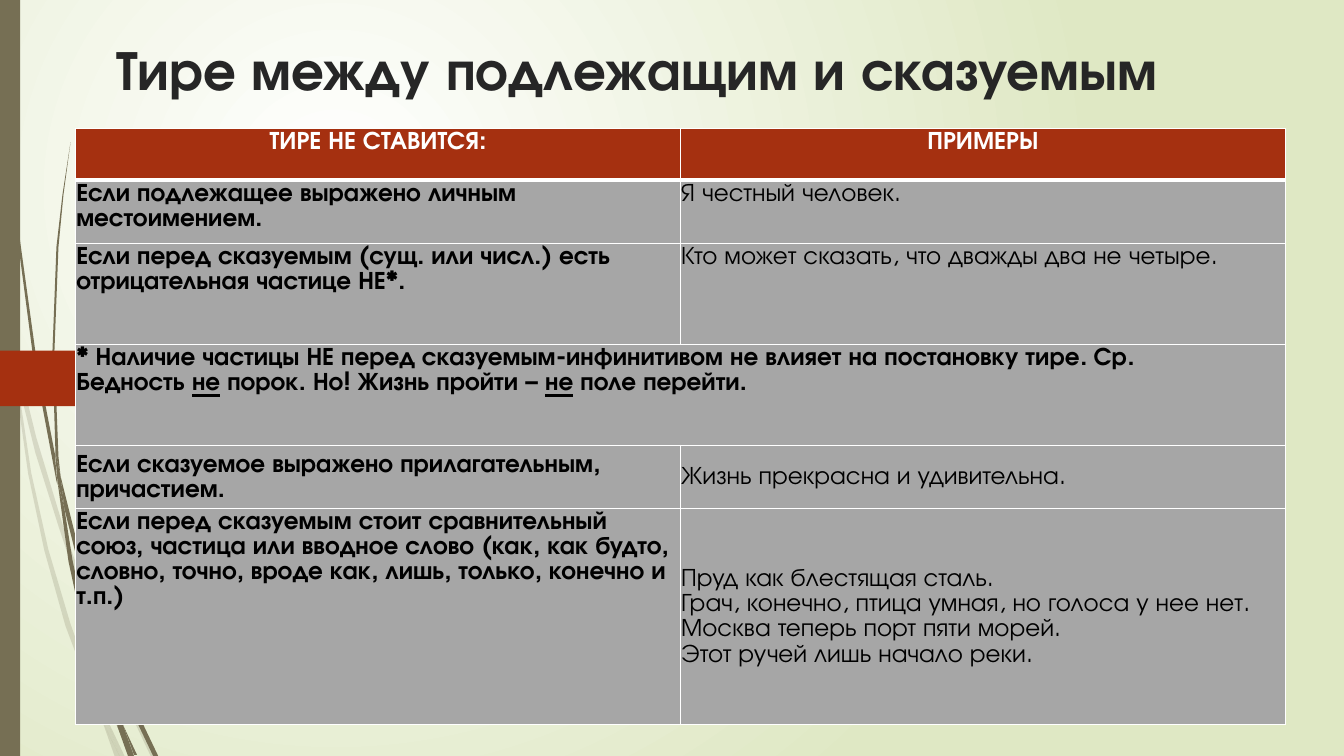
import lxml.etree
import pptx
import pptx.dml.color
import pptx.enum.dml
import pptx.enum.shapes
import pptx.enum.text
import pptx.oxml
import pptx.oxml.ns
import pptx.util

Pt = pptx.util.Pt
qn = pptx.oxml.ns.qn
ALIGN = pptx.enum.text.PP_ALIGN
ANCHOR = pptx.enum.text.MSO_ANCHOR
SHAPES = pptx.enum.shapes.MSO_SHAPE

FONT = "TeX Gyre Adventor"
OLIVE, RUST, GREY, WHITE, BLACK = "766F54", "A53010", "A6A6A6", "FFFFFF", "000000"
GRASS_UNIT = Pt(0.72)
HARD_SPACE = chr(160)

PALE_GRASS = [
    [(11, 350), (9, 322), (0, 282), (0, 299), (10, 344)],
    [(58, 522), (84, 600), (85, 587), (62, 520), (36, 434), (14, 345), (17, 376), (35, 449)],
    [(92, 607), (88, 596), (88, 610), (123, 694), (150, 751), (155, 751), (127, 692)],
    [(119, 751), (124, 751), (105, 711)],
    [(93, 683), (70, 619), (48, 545), (31, 469), (17, 376), (11, 350), (28, 470), (44, 546),
     (65, 621), (92, 693), (101, 714), (99, 707)],
    [(84, 599), (87, 646), (93, 683), (96, 692), (105, 712), (103, 707), (91, 646), (88, 610),
     (88, 608)],
    [(88, 584), (94, 522), (110, 462), (132, 404), (160, 349), (193, 296), (229, 245), (268, 198),
     (290, 175), (312, 153), (289, 175), (268, 197), (228, 244), (191, 295), (158, 348),
     (129, 403), (107, 461), (91, 521), (85, 584), (85, 586), (88, 596)],
    [(101, 714), (114, 751), (119, 751)],
    [(88, 608), (88, 610), (88, 596), (85, 586), (84, 599)],
    [(96, 692), (93, 683), (99, 707), (101, 714), (119, 751), (105, 711)],
]
DARK_GRASS = [
    [(7, 110), (17, 233), (33, 355), (56, 477), (57, 481), (55, 457), (55, 453), (36, 355),
     (19, 232), (8, 109), (5, 48), (4, 0), (3, 0), (4, 48)],
    [(88, 592), (106, 645), (106, 631), (93, 590), (75, 532), (60, 472), (64, 505), (75, 549)],
    [(113, 649), (110, 641), (111, 656), (132, 708), (152, 750), (157, 750), (136, 706)],
    [(110, 691), (98, 657), (83, 607), (72, 556), (64, 505), (57, 477), (68, 557), (79, 608),
     (93, 659), (111, 708), (117, 722), (116, 717)],
    [(60, 472), (58, 453), (54, 349), (58, 245), (63, 193), (70, 141), (62, 193), (56, 245),
     (52, 349), (55, 449)],
    [(133, 749), (136, 749), (122, 719)],
    [(57, 477), (64, 505), (60, 472), (55, 449), (55, 453)],
    [(111, 633), (114, 592), (125, 552), (140, 513), (158, 476), (180, 440), (205, 406), (231, 374),
     (245, 359), (261, 344), (245, 358), (231, 373), (204, 405), (179, 439), (156, 474),
     (136, 512), (122, 551), (110, 591), (106, 631), (110, 641)],
    [(117, 722), (127, 750), (131, 750)],
    [(106, 645), (110, 691), (116, 706), (122, 719), (121, 716), (111, 656), (109, 651)],
    [(106, 645), (109, 651), (111, 656), (110, 641), (106, 631)],
    [(116, 706), (110, 691), (116, 717), (117, 722), (130, 750), (133, 750), (122, 719)],
]
ROWS = [
    (36.7, "ТИРЕ~НЕ~СТАВИТСЯ:", "ПРИМЕРЫ"),
    (45.4, "Если подлежащее выражено личным местоимением.", "Я~честный человек."),
    (72, "Если перед сказуемым (сущ. или числ.) есть отрицательная частице~НЕ*.",
     "Кто может сказать, что дважды два~не~четыре."),
    (72, "*~Наличие частицы НЕ перед сказуемым-инфинитивом не влияет на постановку тире.~Ср. "
     "Бедность~_не_~порок.~Но!~Жизнь пройти –~_не_~поле перейти.", None),
    (45.4, "Если сказуемое выражено прилагательным, причастием.",
     "Жизнь~прекрасна~и~удивительна."),
    (154, "Если перед сказуемым стоит сравнительный союз, частица или вводное слово "
     "(как, как будто, словно, точно, вроде как, лишь, только, конечно~и т.п.)",
     "Пруд~как~блестящая сталь.\nГрач,~конечно, птица умная, но голоса у нее нет.\n"
     "Москва~теперь~порт пяти морей.\nЭтот ручей~лишь~начало реки."),
]
MIDDLE_CELLS = {(4, 0), (4, 1), (5, 1)}


def color(value):
    """Turn a hex string into a colour."""
    return pptx.dml.color.RGBColor.from_string(value)


def paint(shape, value, opacity=100):
    """Fill a shape without outline or shadow."""
    shape.shadow.inherit = False
    shape.line.fill.background()
    shape.fill.solid()
    shape.fill.fore_color.rgb = color(value)
    if opacity < 100:
        tint = shape._element.spPr.find(".//" + qn("a:srgbClr"))
        lxml.etree.SubElement(tint, qn("a:alpha"), val=str(opacity * 1000))


def write_text(frame, text, *, size, value, bold=False, align=ALIGN.LEFT, spacing=None):
    """Write one paragraph; underscores enclose underlined words, tildes are hard spaces."""
    frame.word_wrap = True
    paragraph = frame.paragraphs[0]
    paragraph.alignment = align
    paragraph.line_spacing = spacing
    for number, line in enumerate(text.replace("~", HARD_SPACE).split("\n")):
        if number:
            paragraph.add_line_break()
        for index, part in enumerate(line.split("_")):
            run = paragraph.add_run()
            run.text = part
            run.font.name = FONT
            run.font.size = Pt(size)
            run.font.bold = bold
            run.font.color.rgb = color(value)
            if index % 2:
                run.font.underline = True


def set_border(cell, side, width):
    """Draw one white border of a cell."""
    line = pptx.oxml.parse_xml(
        f'<a:{side} xmlns:a="http://schemas.openxmlformats.org/drawingml/2006/main" '
        f'w="{Pt(width)}"><a:solidFill><a:srgbClr val="{WHITE}"/></a:solidFill></a:{side}>')
    properties = cell._tc.get_or_add_tcPr()
    properties.insert(len(properties.findall("*")) - 1, line)


def add_background(slide):
    """Spread a circular gradient behind the slide."""
    fill = slide.background.fill
    fill.gradient()
    for stop, value in zip(fill.gradient_stops, (WHITE, "DFE8C4")):
        stop.color.rgb = color(value)
    gradient = slide._element.find(".//" + qn("a:gradFill"))
    gradient.remove(gradient.find(qn("a:lin")))
    circle = lxml.etree.SubElement(gradient, qn("a:path"), path="circle")
    lxml.etree.SubElement(circle, qn("a:fillToRect"), l="50000", t="50000", r="100000", b="100000")


def add_decoration(slide, left, top, height):
    """Draw the grass, the side bar and the flag."""
    for blades, opacity in ((PALE_GRASS, 20), (DARK_GRASS, 100)):
        for start, *points in blades:
            builder = slide.shapes.build_freeform(*start, scale=GRASS_UNIT)
            builder.add_line_segments(points)
            paint(builder.convert_to_shape(Pt(left), Pt(top)), OLIVE, opacity)
    bar = slide.shapes.add_shape(SHAPES.RECTANGLE, Pt(left), Pt(top), Pt(14.4), Pt(height))
    paint(bar, OLIVE)
    flag = slide.shapes.add_shape(SHAPES.PENTAGON, Pt(left), Pt(top + 250.4), Pt(125), Pt(39.6))
    paint(flag, RUST)


def add_title(slide, left, top, width, height):
    """Place the slide title."""
    title = slide.shapes.title
    title.left, title.top, title.width, title.height = map(Pt, (left, top, width, height))
    title.text_frame.auto_size = pptx.enum.text.MSO_AUTO_SIZE.NONE
    title.text_frame.vertical_anchor = ANCHOR.BOTTOM
    write_text(title.text_frame, "Тире между подлежащим и сказуемым",
               size=40, value="262626", bold=True)


def add_rules_table(slide, left, top, width):
    """Place the table of rules and examples."""
    height = sum(row[0] for row in ROWS)
    table = slide.shapes.add_table(len(ROWS), 2, Pt(left), Pt(top), Pt(width), Pt(height)).table
    for column in table.columns:
        column.width = Pt(width / 2)
    for row_index, (row_height, *texts) in enumerate(ROWS):
        table.rows[row_index].height = Pt(row_height)
        header = row_index == 0
        for column_index, text in enumerate(texts):
            cell = table.cell(row_index, column_index)
            cell.margin_left = cell.margin_right = cell.margin_top = cell.margin_bottom = Pt(0.5)
            middle = (row_index, column_index) in MIDDLE_CELLS
            cell.vertical_anchor = ANCHOR.MIDDLE if middle else ANCHOR.TOP
            cell.fill.solid()
            cell.fill.fore_color.rgb = color(RUST if header else GREY)
            for side in ("lnL", "lnR", "lnT", "lnB"):
                thick = (side, row_index) in (("lnB", 0), ("lnT", 1))
                set_border(cell, side, 3 if thick else 1)
            if text:
                write_text(cell.text_frame, text, size=18, value=WHITE if header else BLACK,
                           bold=header or column_index == 0, spacing=1.07,
                           align=ALIGN.CENTER if header else ALIGN.LEFT)
        if texts[1] is None:
            table.cell(row_index, 0).merge(table.cell(row_index, 1))


def main():
    """Build and save the presentation."""
    presentation = pptx.Presentation()
    presentation.slide_width, presentation.slide_height = Pt(960), Pt(540)
    slide = presentation.slides.add_slide(presentation.slide_layouts[5])
    add_background(slide)
    add_decoration(slide, 0, 0, 540)
    add_title(slide, 76.3, 1.4, 842.4, 74.9)
    add_rules_table(slide, 54, 92, 864.2)
    presentation.save("out.pptx")


if __name__ == "__main__":
    main()
